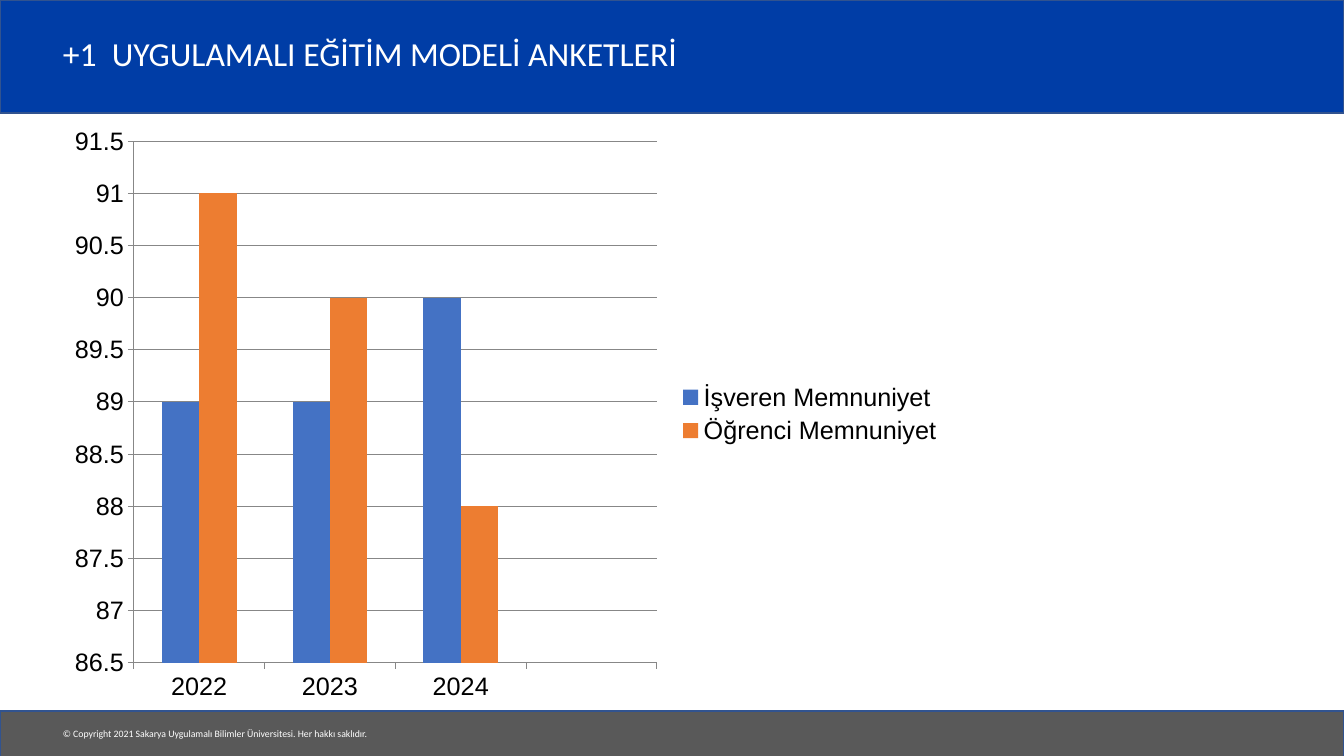
from pptx import Presentation
from pptx.chart.data import CategoryChartData
from pptx.dml.color import RGBColor
from pptx.enum.chart import XL_CHART_TYPE, XL_LEGEND_POSITION, XL_TICK_MARK
from pptx.enum.shapes import MSO_SHAPE
from pptx.enum.text import MSO_ANCHOR
from pptx.util import Pt

COLUMNS = XL_CHART_TYPE.COLUMN_CLUSTERED
RIGHT = XL_LEGEND_POSITION.RIGHT
OUTSIDE = XL_TICK_MARK.OUTSIDE
RECT = MSO_SHAPE.RECTANGLE
TOP, MIDDLE = MSO_ANCHOR.TOP, MSO_ANCHOR.MIDDLE

BLUE = RGBColor(0x00, 0x3D, 0xA6)
GRAY = RGBColor(0x59, 0x59, 0x59)
OUTLINE = RGBColor(0x31, 0x53, 0x8F)
AXIS = RGBColor(0x87, 0x87, 0x87)
WHITE = RGBColor(0xFF, 0xFF, 0xFF)
BLACK = RGBColor(0x00, 0x00, 0x00)

PX = 914400 / 100.8
WIDTH, HEIGHT = 1344, 756

YEARS = ["2022", "2023", "2024", ""]
SURVEYS = [
    ("İşveren Memnuniyet", [89, 89, 90, None], RGBColor(0x44, 0x72, 0xC4)),
    ("Öğrenci Memnuniyet", [91, 90, 88, None], RGBColor(0xED, 0x7D, 0x31)),
]


def emu(*lengths):
    return [round(n * PX) for n in lengths]


def set_attrs(obj, values):
    for name, value in values.items():
        setattr(obj, name, value)


def add_band(slide, box, color):
    sp = slide.shapes.add_shape(RECT, *emu(*box))
    sp.shadow.inherit = False
    sp.fill.solid()
    sp.fill.fore_color.rgb = color
    sp.line.color.rgb = OUTLINE
    sp.line.width = Pt(1)


def add_text(slide, box, text, size, anchor, spacing):
    tf = slide.shapes.add_textbox(*emu(*box)).text_frame
    set_attrs(tf, {"word_wrap": True, "vertical_anchor": anchor})
    p = tf.paragraphs[0]
    p.line_spacing = spacing
    r = p.add_run()
    r.text = text
    set_attrs(r.font, {"name": "Calibri", "size": Pt(size)})
    r.font.color.rgb = WHITE


def add_header(slide, box):
    x, y, w, h = box
    add_band(slide, box, BLUE)
    add_text(slide, (x + 53, y + 19, 1112, 74),
             "+1  UYGULAMALI EĞİTİM MODELİ ANKETLERİ", 24, MIDDLE, 0.9)


def add_footer(slide, box):
    x, y, w, h = box
    add_band(slide, box, GRAY)
    add_text(slide, (x + 53, y + 12, 332, 22),
             "© Copyright 2021 Sakarya Uygulamalı Bilimler Üniversitesi. Her hakkı saklıdır.",
             7, TOP, 1.0)


def add_survey_chart(slide, box):
    data = CategoryChartData()
    data.categories = YEARS
    for name, values, color in SURVEYS:
        data.add_series(name, values)
    chart = slide.shapes.add_chart(COLUMNS, *emu(*box), data).chart
    set_attrs(chart, {"has_title": False, "has_legend": True})
    set_attrs(chart.font, {"name": "Arial", "size": Pt(18)})
    chart.font.color.rgb = BLACK
    set_attrs(chart.legend, {"position": RIGHT, "include_in_layout": False})

    set_attrs(chart.value_axis, {
        "minimum_scale": 86.5, "maximum_scale": 91.5, "major_unit": 0.5,
        "has_major_gridlines": True,
    })
    for axis in (chart.category_axis, chart.value_axis):
        axis.major_tick_mark = OUTSIDE
        axis.format.line.color.rgb = AXIS
    chart.value_axis.major_gridlines.format.line.color.rgb = AXIS

    plot = chart.plots[0]
    set_attrs(plot, {"gap_width": 150, "overlap": 0, "vary_by_categories": False})
    for series, (name, values, color) in zip(plot.series, SURVEYS):
        series.format.fill.solid()
        series.format.fill.fore_color.rgb = color


def main():
    prs = Presentation()
    prs.slide_width, prs.slide_height = emu(WIDTH, HEIGHT)
    slide = prs.slides.add_slide(prs.slide_layouts[6])
    add_header(slide, (0, 0, WIDTH, 113))
    add_footer(slide, (0, 711, WIDTH, 46))
    add_survey_chart(slide, (57, 115, 896, 598))
    prs.save("out.pptx")


if __name__ == "__main__":
    main()
